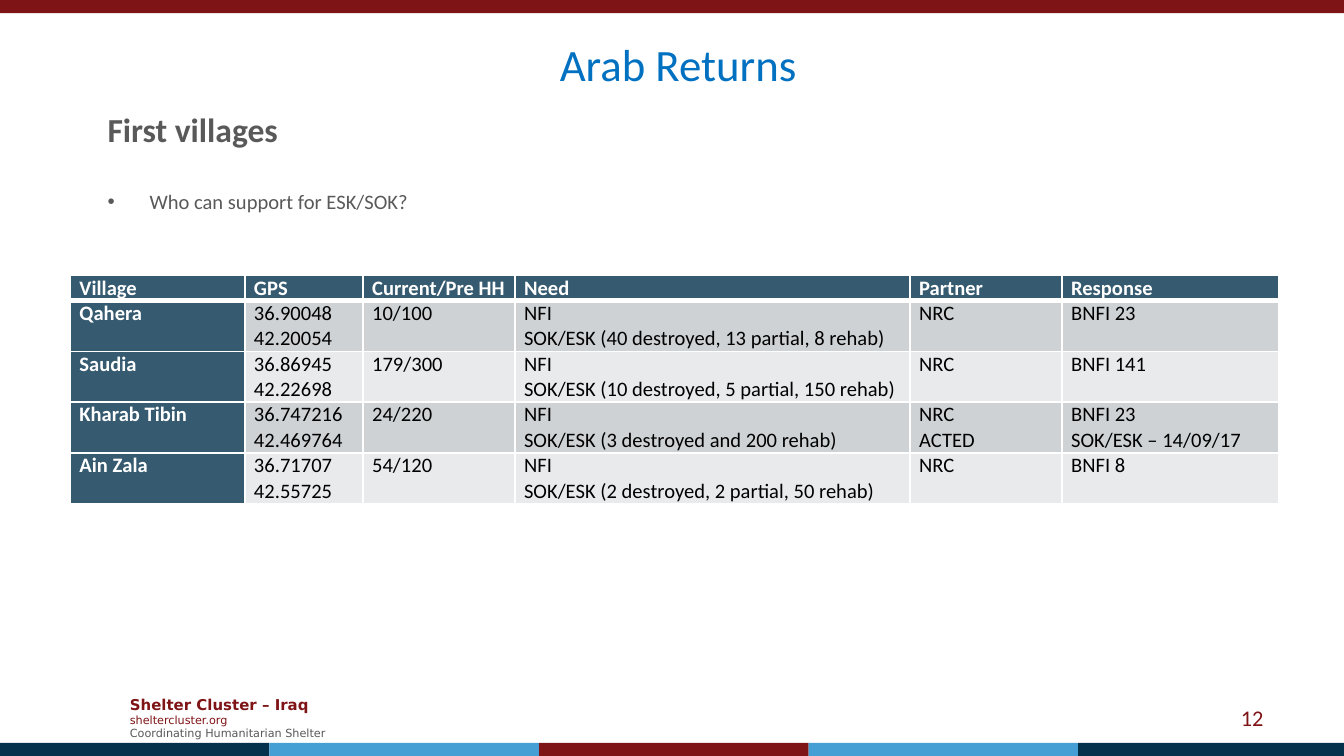
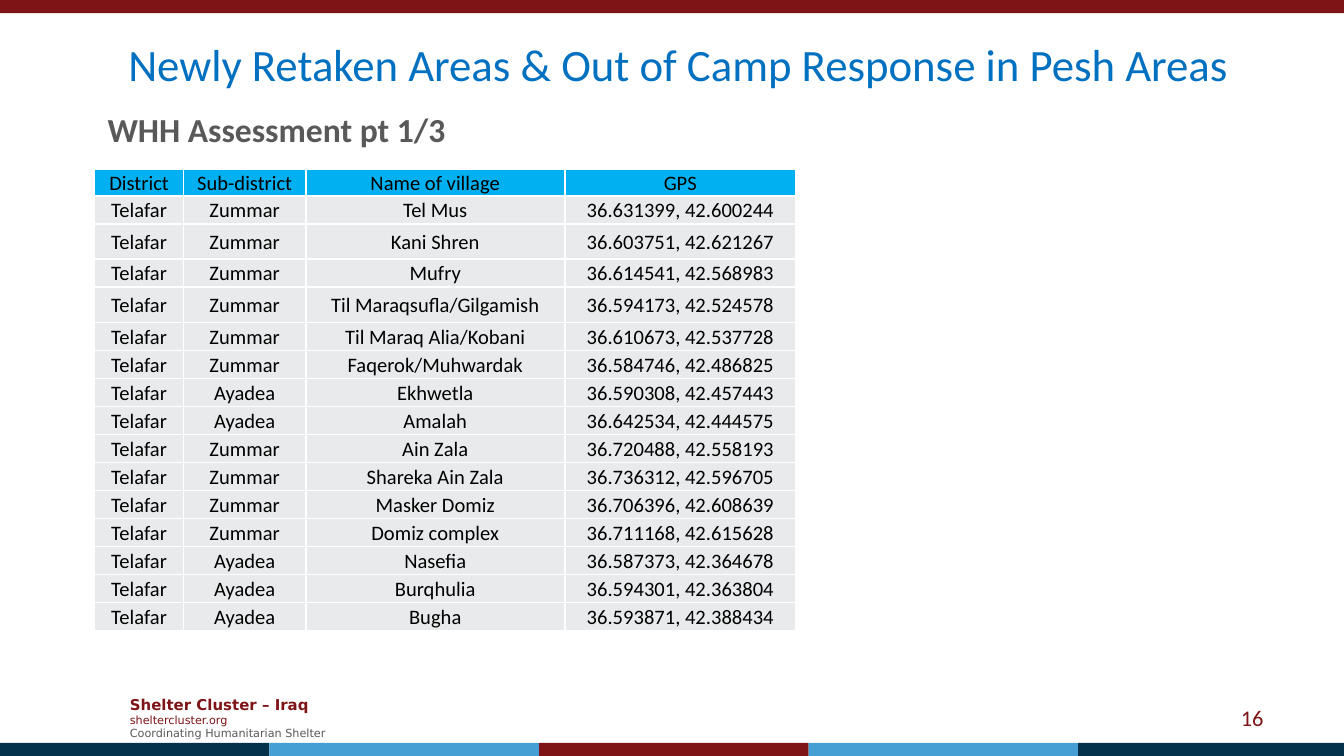
import pptx
import pptx.util
import pptx.dml.color
import pptx.enum.shapes
import pptx.enum.text
import pptx.oxml
import pptx.oxml.ns
import lxml.etree

Pt = pptx.util.Pt
ALIGN = pptx.enum.text.PP_ALIGN
ANCHOR = pptx.enum.text.MSO_ANCHOR
WIDTH, HEIGHT = 720, 405

COLOURS = {
    "maroon": "7F1416",
    "navy": "04314C",
    "sky": "459FD5",
    "title": "0070C0",
    "grey": "595959",
    "slate": "365A70",
    "band_dark": "CED2D5",
    "band_light": "E8EAEB",
    "header_blue": "00B0F0",
    "white": "FFFFFF",
    "black": "000000",
}


def text_style(size, colour, bold=False, name="Calibri"):
    return {"colour": colour, "font": {"size": Pt(size), "bold": bold, "name": name}}


STYLES = {
    "title": text_style(24, "title"),
    "heading": text_style(18, "grey", True),
    "bullet": text_style(11, "grey"),
    "number": text_style(12, "maroon"),
    "cluster": text_style(8, "maroon", True, "DejaVu Sans"),
    "site": text_style(6, "maroon", False, "DejaVu Sans"),
    "motto": text_style(6, "grey", False, "DejaVu Sans"),
    "label": text_style(11, "white", True),
    "cell": text_style(11, "black"),
}

FOOTER_LINES = [
    ("Shelter Cluster – Iraq", "cluster"),
    ("sheltercluster.org", "site"),
    ("Coordinating Humanitarian Shelter", "motto"),
]

RETURNS_COLUMNS = [93.5, 63.3, 81.4, 211.7, 81.4, 116.2]
RETURNS_ROWS = [
    ("Village", "GPS", "Current/Pre HH", "Need", "Partner", "Response"),
    ("Qahera", "36.90048 42.20054", "10/100",
     "NFI\nSOK/ESK (40 destroyed, 13 partial, 8 rehab)", "NRC", "BNFI 23"),
    ("Saudia", "36.86945 42.22698", "179/300",
     "NFI\nSOK/ESK (10 destroyed, 5 partial, 150 rehab)", "NRC", "BNFI 141"),
    ("Kharab Tibin", "36.747216 42.469764", "24/220",
     "NFI\nSOK/ESK (3 destroyed and 200 rehab)", "NRC\nACTED",
     "BNFI 23\nSOK/ESK – 14/09/17"),
    ("Ain Zala", "36.71707 42.55725", "54/120",
     "NFI\nSOK/ESK (2 destroyed, 2 partial, 50 rehab)", "NRC", "BNFI 8"),
]

ASSESSMENT_COLUMNS = [47.7, 65.4, 138.8, 123.8]
ASSESSMENT_HEADER = ("District", "Sub-district", "Name of village", "GPS")
ASSESSED_VILLAGES = [
    ("Zummar", "Tel Mus", "36.631399, 42.600244"),
    ("Zummar", "Kani Shren", "36.603751, 42.621267"),
    ("Zummar", "Mufry", "36.614541, 42.568983"),
    ("Zummar", "Til Maraqsufla/Gilgamish", "36.594173, 42.524578"),
    ("Zummar", "Til Maraq Alia/Kobani", "36.610673, 42.537728"),
    ("Zummar", "Faqerok/Muhwardak", "36.584746, 42.486825"),
    ("Ayadea", "Ekhwetla", "36.590308, 42.457443"),
    ("Ayadea", "Amalah", "36.642534, 42.444575"),
    ("Zummar", "Ain Zala", "36.720488, 42.558193"),
    ("Zummar", "Shareka Ain Zala", "36.736312, 42.596705"),
    ("Zummar", "Masker Domiz", "36.706396, 42.608639"),
    ("Zummar", "Domiz complex", "36.711168, 42.615628"),
    ("Ayadea", "Nasefia", "36.587373, 42.364678"),
    ("Ayadea", "Burqhulia", "36.594301, 42.363804"),
    ("Ayadea", "Bugha", "36.593871, 42.388434"),
]


def colour_of(name):
    return pptx.dml.color.RGBColor.from_string(COLOURS[name])


def set_values(target, values):
    for name, value in values.items():
        setattr(target, name, value)


def move(shape, box):
    set_values(shape, dict(zip(("left", "top", "width", "height"), map(Pt, box))))


def write_lines(frame, lines, align=ALIGN.LEFT):
    for index, (text, style) in enumerate(lines):
        para = frame.add_paragraph() if index else frame.paragraphs[0]
        set_values(para, {"alignment": align, "space_before": Pt(0), "space_after": Pt(0)})
        span = para.add_run()
        span.text = text
        set_values(span.font, STYLES[style]["font"])
        span.font.color.rgb = colour_of(STYLES[style]["colour"])


def set_bullet(para, indent, symbol=None):
    properties = para._p.get_or_add_pPr()
    properties.set("marL", str(Pt(indent)))
    properties.set("indent", str(-Pt(indent)))
    tag = "a:buChar" if symbol else "a:buNone"
    bullet = lxml.etree.SubElement(properties, pptx.oxml.ns.qn(tag))
    if symbol:
        bullet.set("char", symbol)


def prepare_frame(frame, anchor):
    set_values(frame, {
        "word_wrap": True,
        "auto_size": pptx.enum.text.MSO_AUTO_SIZE.NONE,
        "vertical_anchor": anchor,
        "margin_left": Pt(7.2), "margin_right": Pt(7.2),
        "margin_top": Pt(3.6), "margin_bottom": Pt(3.6),
    })


def add_band(page, box, colour):
    band = page.shapes.add_shape(pptx.enum.shapes.MSO_SHAPE.RECTANGLE, *map(Pt, box))
    band.shadow.inherit = False
    band.fill.solid()
    band.fill.fore_color.rgb = colour_of(colour)
    band.line.fill.background()


def add_bands(page):
    add_band(page, (0, 0, WIDTH, 7), "maroon")
    step = 144.4
    for index, colour in enumerate(("navy", "sky", "maroon", "sky", "navy")):
        left = index * step
        add_band(page, (left, HEIGHT - 7, min(step, WIDTH - left), 7), colour)


def add_text(page, box, lines, align=ALIGN.LEFT):
    text_box = page.shapes.add_textbox(*map(Pt, box))
    prepare_frame(text_box.text_frame, ANCHOR.MIDDLE)
    write_lines(text_box.text_frame, lines, align)


def add_page(deck, title, number):
    page = deck.slides.add_slide(deck.slide_layouts[1])
    add_bands(page)
    add_text(page, (62.5, 368.6, 150, 31.7), FOOTER_LINES)
    add_text(page, (516.2, 373.7, 167.8, 21.6), [(number, "number")], ALIGN.RIGHT)
    heading = page.shapes.title
    move(heading, (42.5, 15.8, 641.5, 36))
    prepare_frame(heading.text_frame, ANCHOR.TOP)
    write_lines(heading.text_frame, [(title, "title")], ALIGN.CENTER)
    return page


def fill_body(page, box, heading, bullets=()):
    body = page.placeholders[1]
    move(body, box)
    frame = body.text_frame
    prepare_frame(frame, ANCHOR.TOP)
    write_lines(frame, [(heading, "heading")] + [(text, "bullet") for text in bullets])
    set_bullet(frame.paragraphs[0], 0)
    for para in frame.paragraphs[1:]:
        para.space_before = Pt(21.5)
        set_bullet(para, 22.5, "•")


def set_borders(cell, widths):
    properties = cell._tc.get_or_add_tcPr()
    for side, width in zip("LRTB", widths):
        properties.append(pptx.oxml.parse_xml(
            f'<a:ln{side} {pptx.oxml.ns.nsdecls("a")} w="{Pt(width)}"><a:solidFill>'
            f'<a:srgbClr val="{COLOURS["white"]}"/></a:solidFill></a:ln{side}>'))


def add_grid(page, corner, columns, heights, rows, look, cell_format, align, rule=1):
    size = (sum(columns), sum(heights))
    table = page.shapes.add_table(len(rows), len(columns), *map(Pt, corner + size)).table
    table.horz_banding = False
    for column, width in zip(table.columns, columns):
        column.width = Pt(width)
    for row_index, (values, height) in enumerate(zip(rows, heights)):
        table.rows[row_index].height = Pt(height)
        top = rule if row_index == 1 else 1
        bottom = rule if row_index == 0 else 1
        for column_index, value in enumerate(values):
            cell = table.cell(row_index, column_index)
            fill, style = look(row_index, column_index)
            set_borders(cell, (1, 1, top, bottom))
            cell.fill.solid()
            cell.fill.fore_color.rgb = colour_of(fill)
            set_values(cell, cell_format)
            lines = [(line, style) for line in value.split("\n")]
            write_lines(cell.text_frame, lines, align)


def returns_look(row, column):
    if row == 0 or column == 0:
        return "slate", "label"
    return ("band_dark" if row % 2 else "band_light"), "cell"


def assessment_look(row, column):
    return ("band_light" if row else "header_blue"), "cell"


def build_returns(deck):
    page = add_page(deck, "Arab Returns", "12")
    fill_body(page, (50.4, 54.7, 586, 64), "First villages", ["Who can support for ESK/SOK?"])
    cell_format = {"margin_left": Pt(4.9), "margin_right": Pt(4.9), "margin_top": Pt(0),
                   "margin_bottom": Pt(0), "vertical_anchor": ANCHOR.TOP}
    add_grid(page, (37.7, 147.5), RETURNS_COLUMNS, [13] + [25.2] * 4, RETURNS_ROWS,
             returns_look, cell_format, ALIGN.LEFT, rule=3)


def build_assessment(deck):
    page = add_page(deck, "Newly Retaken Areas & Out of Camp Response in Pesh Areas", "16")
    fill_body(page, (50.4, 54.7, 586, 82), "WHH Assessment pt 1/3")
    rows = [ASSESSMENT_HEADER] + [("Telafar",) + village for village in ASSESSED_VILLAGES]
    heights = [14, 15, 19, 15, 19] + [15] * 11
    cell_format = {"margin_left": Pt(0.7), "margin_right": Pt(0.7), "margin_top": Pt(0.7),
                   "margin_bottom": Pt(0), "vertical_anchor": ANCHOR.MIDDLE}
    add_grid(page, (50.7, 90.6), ASSESSMENT_COLUMNS, heights, rows,
             assessment_look, cell_format, ALIGN.CENTER)


def main():
    deck = pptx.Presentation()
    set_values(deck, {"slide_width": Pt(WIDTH), "slide_height": Pt(HEIGHT)})
    build_returns(deck)
    build_assessment(deck)
    deck.save("out.pptx")


if __name__ == "__main__":
    main()
